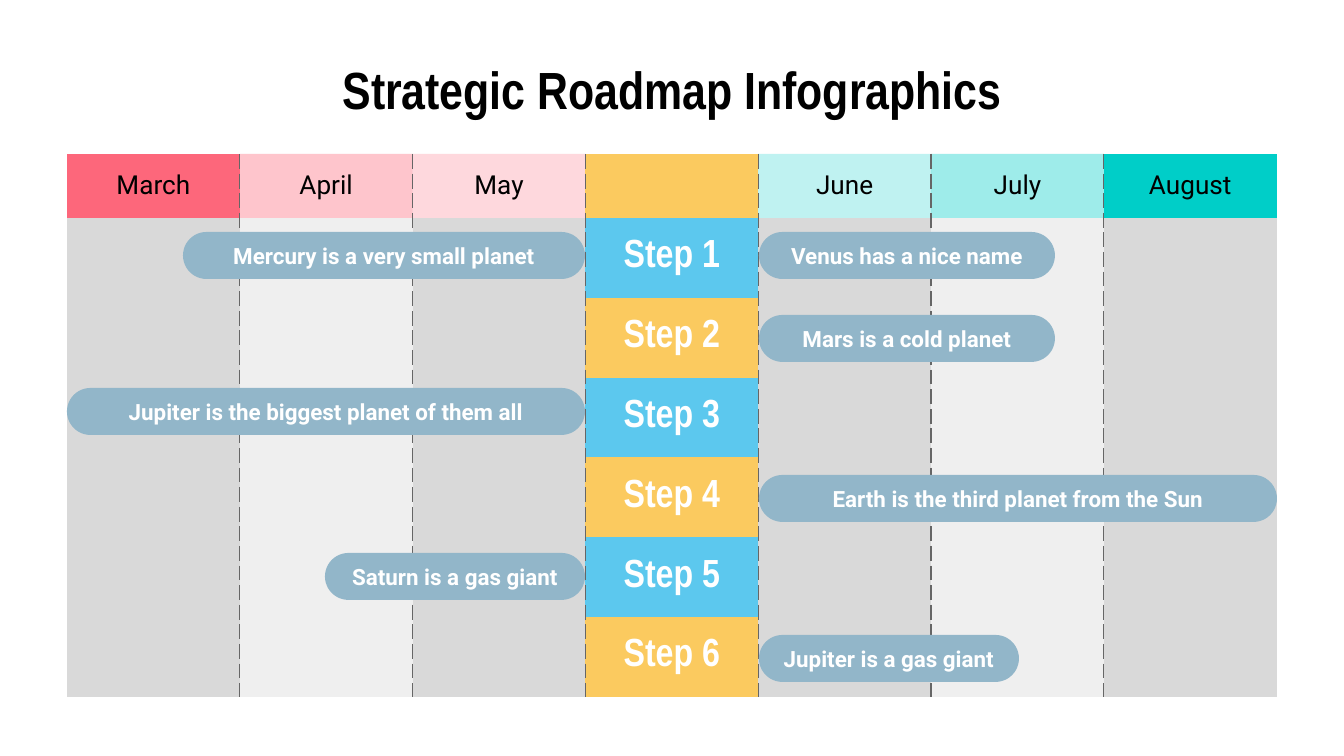
"""Build a strategic roadmap slide: six months around a column of steps."""
from typing import NamedTuple

from lxml.etree import SubElement
from pptx import Presentation
from pptx.dml.color import RGBColor
from pptx.enum.shapes import MSO_SHAPE as Shape
from pptx.enum.text import MSO_ANCHOR as Anchor, PP_ALIGN as Align
from pptx.oxml import parse_xml
from pptx.oxml.ns import nsdecls, qn
from pptx.util import Emu, Pt

EMU_PER_PX = 914400 / 134.4
INSET = 13
TABLE_LEFT, TABLE_TOP, TABLE_WIDTH = 67, 154, 1210
HEADER_HEIGHT, STEPS_HEIGHT, STEP_COUNT = 64, 479, 6
STEPS_LEFT, STEPS_RIGHT = 585, 759
PILL_HEIGHT = 47

BLACK = RGBColor(0x00, 0x00, 0x00)
WHITE = RGBColor(0xFF, 0xFF, 0xFF)
PINK = RGBColor(0xFD, 0x67, 0x7B)
TEAL = RGBColor(0x00, 0xCE, 0xC8)
YELLOW = RGBColor(0xFB, 0xCA, 0x5F)
BLUE = RGBColor(0x5C, 0xC8, 0xEE)
GREY = RGBColor(0xD9, 0xD9, 0xD9)
LIGHT_GREY = RGBColor(0xEF, 0xEF, 0xEF)
DIVIDER = RGBColor(0x66, 0x66, 0x66)
SLATE = RGBColor(0x92, 0xB6, 0xC9)
NARROW, ROBOTO = "Arial Narrow", "Roboto"


class Column(NamedTuple):
    heading: str
    color: RGBColor
    opacity: int
    body: RGBColor


class Activity(NamedTuple):
    label: str
    start: int
    end: int
    top: int


COLUMNS = [
    Column("March", PINK, 100, GREY),
    Column("April", PINK, 38, LIGHT_GREY),
    Column("May", PINK, 25, GREY),
    Column("", YELLOW, 100, BLUE),
    Column("June", TEAL, 25, GREY),
    Column("July", TEAL, 38, LIGHT_GREY),
    Column("August", TEAL, 100, GREY),
]
STEP_COLUMN = 3
ACTIVITIES = [
    Activity("Mercury is a very small planet", 183, STEPS_LEFT, 232),
    Activity("Venus has a nice name", STEPS_RIGHT, 1055, 232),
    Activity("Mars is a cold planet", STEPS_RIGHT, 1055, 315),
    Activity("Jupiter is the biggest planet of them all", TABLE_LEFT, STEPS_LEFT, 388),
    Activity("Earth is the third planet from the Sun", STEPS_RIGHT, 1277, 475),
    Activity("Saturn is a gas giant", 325, STEPS_LEFT, 553),
    Activity("Jupiter is a gas giant", STEPS_RIGHT, 1019, 635),
]


def px(length: int) -> Emu:
    return Emu(round(length * EMU_PER_PX))


def write(frame, text: str, *, size: int, font: str, color: RGBColor, bold: bool = False) -> None:
    paragraph = frame.paragraphs[0]
    paragraph.alignment = Align.CENTER
    paragraph.font.size = Pt(size)
    if text:
        run = paragraph.add_run()
        run.text = text
        run.font.size, run.font.name, run.font.bold = Pt(size), font, bold
        run.font.color.rgb = color


def pad(holder) -> None:
    holder.margin_left = holder.margin_right = px(INSET)
    holder.margin_top = holder.margin_bottom = px(INSET)
    holder.vertical_anchor = Anchor.MIDDLE


def add_title(slide, title: str) -> None:
    frame = slide.shapes.add_textbox(px(67), px(61), px(1210), px(56)).text_frame
    frame.word_wrap = True
    pad(frame)
    write(frame, title, size=28, font=NARROW, color=BLACK, bold=True)


def set_borders(cell, dashed_sides: set[str]) -> None:
    properties = cell._tc.get_or_add_tcPr()
    dashed = (f'<a:solidFill><a:srgbClr val="{DIVIDER}"/></a:solidFill>'
              '<a:prstDash val="dash"/>')
    for order, side in enumerate("LRTB"):
        stroke = dashed if side in dashed_sides else "<a:noFill/>"
        properties.insert(order, parse_xml(
            f'<a:ln{side} {nsdecls("a")} w="{Pt(0.75)}">{stroke}</a:ln{side}>'))


def fill_cell(cell, color: RGBColor, opacity: int = 100) -> None:
    cell.fill.solid()
    cell.fill.fore_color.rgb = color
    if opacity < 100:
        shade = cell._tc.tcPr.find(f'{qn("a:solidFill")}/{qn("a:srgbClr")}')
        SubElement(shade, qn("a:alpha"), val=str(opacity * 1000))


def add_calendar(slide) -> None:
    table = slide.shapes.add_table(
        STEP_COUNT + 1, len(COLUMNS), px(TABLE_LEFT), px(TABLE_TOP),
        px(TABLE_WIDTH), px(HEADER_HEIGHT + STEPS_HEIGHT)).table
    table.first_row = table.horz_banding = False
    table.rows[0].height = px(HEADER_HEIGHT)
    for step in range(1, STEP_COUNT + 1):
        table.rows[step].height = Emu(px(STEPS_HEIGHT) // STEP_COUNT)
    last = len(COLUMNS) - 1
    for index, column in enumerate(COLUMNS):
        table.columns[index].width = Emu(px(TABLE_WIDTH) // len(COLUMNS))
        dividers = {side for side, edge in (("L", 0), ("R", last)) if index != edge}
        for row in range(STEP_COUNT + 1):
            cell = table.cell(row, index)
            pad(cell)
            if row == 0:
                fill_cell(cell, column.color, column.opacity)
                write(cell.text_frame, column.heading, size=14, font=ROBOTO, color=BLACK)
            elif index == STEP_COLUMN:
                fill_cell(cell, column.body if row % 2 else column.color)
                write(cell.text_frame, f"Step {row}", size=21, font=NARROW,
                      color=WHITE, bold=True)
            else:
                fill_cell(cell, column.body)
                write(cell.text_frame, "", size=14, font=ROBOTO, color=BLACK)
            set_borders(cell, dividers)


def add_activity(slide, activity: Activity) -> None:
    pill = slide.shapes.add_shape(
        Shape.ROUNDED_RECTANGLE, px(activity.start), px(activity.top),
        px(activity.end - activity.start), px(PILL_HEIGHT))
    pill.adjustments[0] = 0.5
    pill.shadow.inherit = False
    pill.fill.solid()
    pill.fill.fore_color.rgb = SLATE
    pill.line.fill.background()
    pad(pill.text_frame)
    pill.text_frame.word_wrap = True
    write(pill.text_frame, activity.label, size=12, font=ROBOTO, color=WHITE, bold=True)


def main() -> None:
    deck = Presentation()
    deck.slide_width, deck.slide_height = px(1344), px(756)
    slide = deck.slides.add_slide(deck.slide_layouts[6])
    add_title(slide, "Strategic Roadmap Infographics")
    add_calendar(slide)
    for activity in ACTIVITIES:
        add_activity(slide, activity)
    deck.save("out.pptx")


if __name__ == "__main__":
    main()
